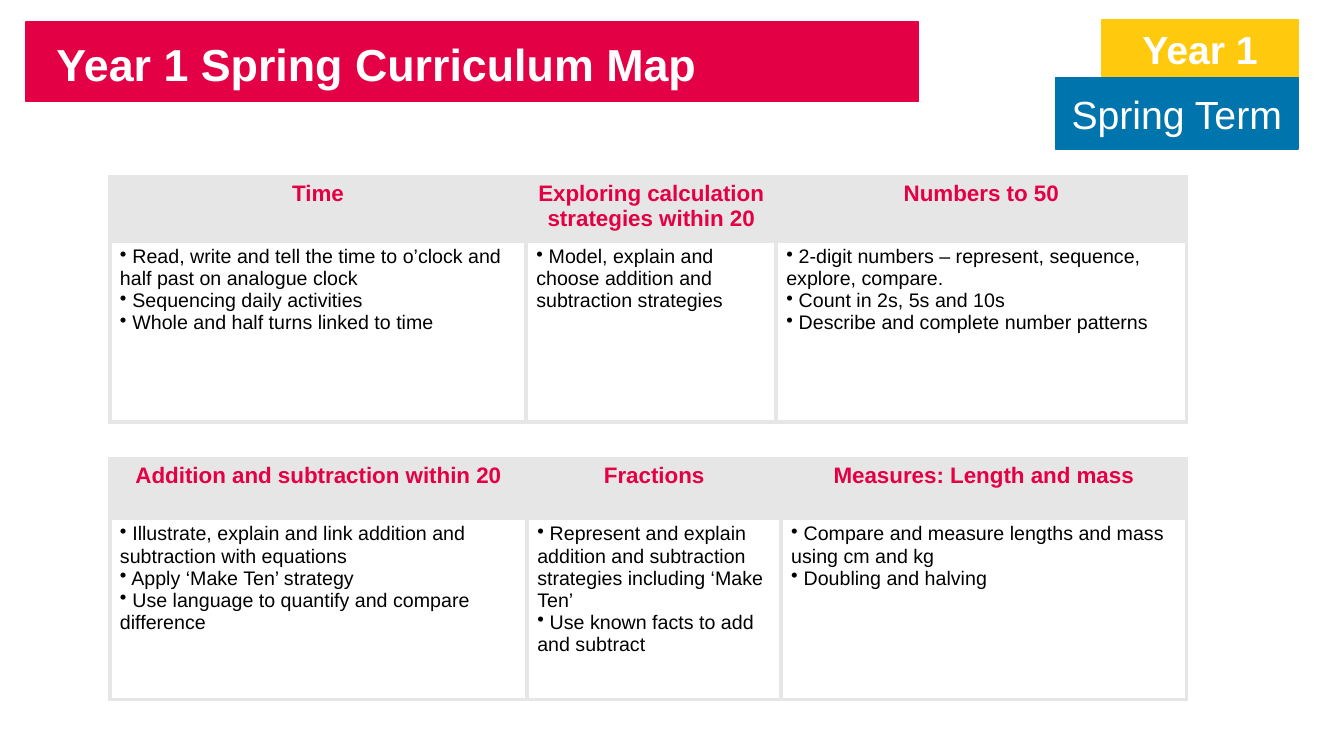
import pptx
import pptx.util
import pptx.dml.color
import pptx.enum.shapes
import pptx.enum.text
import pptx.oxml
import pptx.oxml.ns
import lxml.etree

Pt = pptx.util.Pt
ALIGN = pptx.enum.text.PP_ALIGN
ANCHOR = pptx.enum.text.MSO_ANCHOR

# Content
TITLE = "Year 1 Spring Curriculum Map"
TITLE_BOX = (33.1, 22.3, 475.9, 46)
BANNER_BOX = (18.7, 15.8, 637.2, 56.9)
LABELS = [
    {"text": "Year 1", "box": (787, 14.4, 140.4, 41), "color": "yellow",
     "bold": True, "anchor": ANCHOR.TOP},
    {"text": "Spring Term", "box": (753.8, 55.4, 173.5, 51.1), "color": "blue",
     "bold": False, "anchor": ANCHOR.MIDDLE},
]
TABLE_LEFT = 78.5
BODY_HEIGHT = 129.6
TABLES = [
    {"top": 126, "header_height": 46, "widths": (297.4, 178.6, 293),
     "topics": {
         "Time": [
             "Read, write and tell the time to o’clock and half past on analogue clock",
             "Sequencing daily activities",
             "Whole and half turns linked to time"],
         "Exploring calculation strategies within 20": [
             "Model, explain and choose addition and subtraction strategies"],
         "Numbers to 50": [
             "2-digit numbers – represent, sequence, explore, compare.",
             "Count in 2s, 5s and 10s",
             "Describe and complete number patterns"]}},
    {"top": 327.6, "header_height": 42.5, "widths": (298.1, 181.4, 289.5),
     "topics": {
         "Addition and subtraction within 20": [
             "Illustrate, explain and link addition and subtraction with equations",
             "Apply ‘Make Ten’ strategy",
             "Use language to quantify and compare difference"],
         "Fractions": [
             "Represent and explain addition and subtraction strategies including ‘Make Ten’",
             "Use known facts to add and subtract"],
         "Measures: Length and mass": [
             "Compare and measure lengths and mass using cm and kg",
             "Doubling and halving"]}},
]

THEME = {
    "font": "Arial",
    "colors": {"red": "E40045", "yellow": "FFC90D", "blue": "0074AC",
               "grey": "E6E6E6", "white": "FFFFFF", "black": "000000"},
    "sizes": {"title": 32, "label": 28, "header": 16, "body": 14},
    "border": 3,
}


def rgb(name):
    return pptx.dml.color.RGBColor.from_string(THEME["colors"][name])


def in_points(values):
    return [Pt(value) for value in values]


def write(paragraph, text, size, color, bold=False, align=ALIGN.LEFT):
    run = paragraph.add_run()
    run.text = text
    paragraph.alignment = align
    style = {"name": THEME["font"], "size": Pt(THEME["sizes"][size]), "bold": bold}
    for name, value in style.items():
        setattr(run.font, name, value)
    run.font.color.rgb = rgb(color)


def add_box(slide, box, color):
    shape = slide.shapes.add_shape(
        pptx.enum.shapes.MSO_SHAPE.RECTANGLE, *in_points(box))
    shape.shadow.inherit = False
    shape.fill.solid()
    shape.fill.fore_color.rgb = rgb(color)
    shape.line.color.rgb = rgb(color)
    shape.line.width = Pt(1)
    return shape


def add_bullet(paragraph):
    properties = paragraph._p.get_or_add_pPr()
    properties.set("marL", "0")
    properties.set("indent", "0")
    bullet = lxml.etree.SubElement(properties, pptx.oxml.ns.qn("a:buChar"))
    bullet.set("char", "•")


def format_cell(cell, fill):
    properties = cell._tc.get_or_add_tcPr()
    for side in ("lnL", "lnR", "lnT", "lnB"):
        properties.append(pptx.oxml.parse_xml(
            f'<a:{side} {pptx.oxml.ns.nsdecls("a")} w="{Pt(THEME["border"])}">'
            f'<a:solidFill><a:srgbClr val="{THEME["colors"]["grey"]}"/></a:solidFill>'
            f'</a:{side}>'))
    cell.fill.solid()
    cell.fill.fore_color.rgb = rgb(fill)


def add_topic_table(slide, data):
    heights = (data["header_height"], BODY_HEIGHT)
    box = (TABLE_LEFT, data["top"], sum(data["widths"]), sum(heights))
    table = slide.shapes.add_table(2, len(data["widths"]), *in_points(box)).table
    table.first_row = table.horz_banding = False
    for row, height in zip(table.rows, heights):
        row.height = Pt(height)
    for index, (topic, points) in enumerate(data["topics"].items()):
        table.columns[index].width = Pt(data["widths"][index])
        header, body = table.cell(0, index), table.cell(1, index)
        format_cell(header, "grey")
        format_cell(body, "white")
        write(header.text_frame.paragraphs[0], topic, "header", "red", True, ALIGN.CENTER)
        for number, point in enumerate(points):
            frame = body.text_frame
            paragraph = frame.add_paragraph() if number else frame.paragraphs[0]
            write(paragraph, " " + point, "body", "black")
            add_bullet(paragraph)


def main():
    presentation = pptx.Presentation()
    presentation.slide_width, presentation.slide_height = Pt(960), Pt(540)
    slide = presentation.slides.add_slide(presentation.slide_layouts[5])

    # Banner with the title in front of it
    add_box(slide, BANNER_BOX, "red")
    title = slide.shapes.title
    for name, value in zip(("left", "top", "width", "height"), in_points(TITLE_BOX)):
        setattr(title, name, value)
    frame_format = {"word_wrap": False, "vertical_anchor": ANCHOR.TOP,
                    "auto_size": pptx.enum.text.MSO_AUTO_SIZE.NONE}
    for name, value in frame_format.items():
        setattr(title.text_frame, name, value)
    write(title.text_frame.paragraphs[0], TITLE, "title", "white", True)
    slide.shapes._spTree.append(title._element)

    # Year and term labels
    for label in LABELS:
        shape = add_box(slide, label["box"], label["color"])
        shape.text_frame.vertical_anchor = label["anchor"]
        write(shape.text_frame.paragraphs[0], label["text"], "label", "white",
              label["bold"], ALIGN.CENTER)

    # Topic tables
    for data in TABLES:
        add_topic_table(slide, data)

    presentation.save("out.pptx")


if __name__ == "__main__":
    main()
